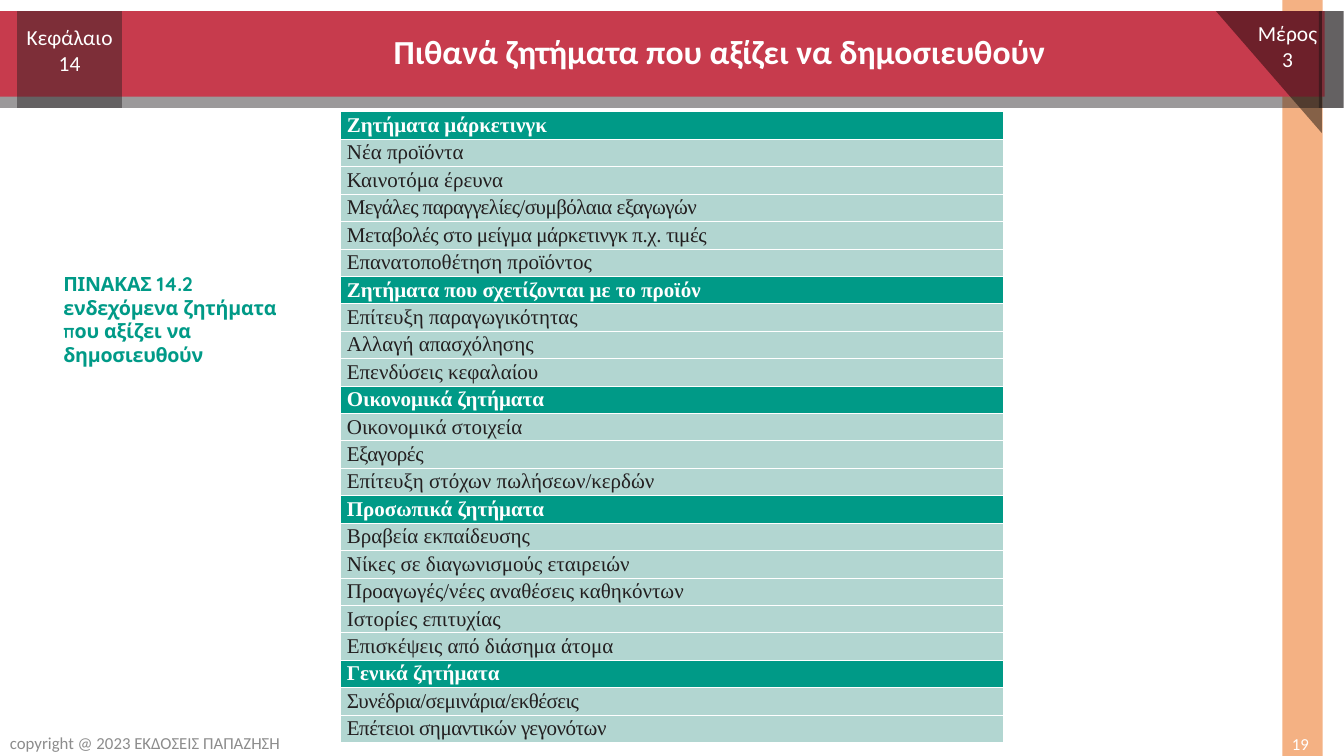
from lxml import etree
from pptx import Presentation, util as u
from pptx.dml import color as dc
from pptx.enum import shapes, text
from pptx.oxml import ns

INK = {"peach": "F4B183", "dark": "231F20", "red": "C73B4D", "black": "000000",
       "white": "FFFFFF", "gray": "8C8C8C", "teal": "009A87", "mint": "B2D6D1"}

HEAD = "Πιθανά ζητήματα που αξίζει να δημοσιευθούν"
TOPICS = [
    ("Ζητήματα μάρκετινγκ", [
        ("Νέα προϊόντα", 0), ("Καινοτόμα έρευνα", 0),
        ("Μεγάλες παραγγελίες/συμβόλαια εξαγωγών", -0.4),
        ("Μεταβολές στο μείγμα μάρκετινγκ π.χ. τιμές", -0.3),
        ("Επανατοποθέτηση προϊόντος", 0)]),
    ("Ζητήματα που σχετίζονται με το προϊόν", [
        ("Επίτευξη παραγωγικότητας", 0), ("Αλλαγή απασχόλησης", 0),
        ("Επενδύσεις κεφαλαίου", 0)]),
    ("Οικονομικά ζητήματα", [
        ("Οικονομικά στοιχεία", 0), ("Εξαγορές", -0.3),
        ("Επίτευξη στόχων πωλήσεων/κερδών", 0)]),
    ("Προσωπικά ζητήματα", [
        ("Βραβεία εκπαίδευσης", 0), ("Νίκες σε διαγωνισμούς εταιρειών", 0),
        ("Προαγωγές/νέες αναθέσεις καθηκόντων", 0),
        ("Ιστορίες επιτυχίας", 0), ("Επισκέψεις από διάσημα άτομα"[:-1], 0)]),
    ("Γενικά ζητήματα", [
        ("Συνέδρια/σεμινάρια/εκθέσεις", -0.4),
        ("Επέτειοι σημαντικών γεγονότων", -0.35)]),
]
TOPICS[3][1][-1] = ("Επισκέψεις από διάσημα άτομα", 0)

BOX, TRI = shapes.MSO_SHAPE.RECTANGLE, shapes.MSO_SHAPE.RIGHT_TRIANGLE
MID, TOP = text.MSO_ANCHOR.MIDDLE, text.MSO_ANCHOR.TOP
LEFT, CENTER, RIGHT = text.PP_ALIGN.LEFT, text.PP_ALIGN.CENTER, text.PP_ALIGN.RIGHT
LABEL = {"name": "Calibri", "size": 15.3, "ink": "white"}
SMALL = {"name": "Calibri", "size": 12, "ink": "gray"}
NOTE = {"name": "Quicksand", "size": 14, "ink": "teal", "bold": True, "gap": -0.2}
CELL = {"name": "Times New Roman", "size": 15}

PARTS = [
    ("shape", BOX, (95.42, 0, 3, 100), "peach", 100),
    ("shape", BOX, (0, 1.47, 99.92, 12.8), "dark", 45),
    ("shape", BOX, (0, 1.47, 98.57, 11.33), "red", 100),
    ("shape", BOX, (98.12, 1.47, 1.88, 12.8), "dark", 45),
    ("title", HEAD, (10.43, 1.47, 86.2, 11.33)),
    ("text", ["copyright @ 2023 ΕΚΔΟΣΕΙΣ ΠΑΠΑΖΗΣΗ"], (0, 96.27, 38.71, 4), SMALL, LEFT, MID),
    ("text", ["19"], (87.32, 96.8, 10.8, 3.07), {**SMALL, "ink": "white"}, RIGHT, MID),
    ("shape", BOX, (1.28, 1.47, 7.8, 12.8), "dark", 45),
    ("text", ["Κεφάλαιο", "14"], (0.08, 2.53, 10.2, 8.27), LABEL, CENTER, TOP),
    ("shape", TRI, (90.47, 1.47, 7.88, 16.13), "black", 45),
    ("text", ["Μέρος", "3"], (90.7, 2, 10.2, 8.27), LABEL, CENTER, TOP),
    ("table", TOPICS, (25.36, 14.8, 49.29, 83.47)),
    ("text", ["ΠΙΝΑΚΑΣ 14.2", "ενδεχόμενα ζητήματα που αξίζει να δημοσιευθούν"],
     (3.98, 35.33, 19.35, 10.8), NOTE, LEFT, TOP),
]

deck = Presentation()
deck.slide_width, deck.slide_height = u.Inches(13.33), u.Inches(7.5)
slide = deck.slides.add_slide(deck.slide_layouts[0])
tree = slide.shapes
sub = slide.placeholders[1].element
sub.getparent().remove(sub)


def tint(name):
    return dc.RGBColor.from_string(INK[name])


def place(area):
    sides = (deck.slide_width, deck.slide_height) * 2
    return [int(side * part / 100) for side, part in zip(sides, area)]


def write(para, words, style):
    run = para.add_run()
    run.text = words
    for key, val in style.items():
        if key == "ink":
            run.font.color.rgb = tint(val)
        elif key == "gap":
            run.font._element.set("spc", str(round(val * 100)))
        else:
            setattr(run.font, key, u.Pt(val) if key == "size" else val)


def draw_shape(kind, area, ink, alpha):
    item = tree.add_shape(kind, *place(area))
    item.shadow.inherit = False
    item.fill.solid()
    item.fill.fore_color.rgb = tint(ink)
    item.line.fill.background()
    if kind == TRI:
        item.rotation = 180
    if alpha < 100:
        tone = item.element.spPr.find(".//" + ns.qn("a:srgbClr"))
        etree.SubElement(tone, ns.qn("a:alpha"), val=str(alpha * 1000))


def draw_title(words, area):
    item = tree.title
    item.left, item.top, item.width, item.height = place(area)
    item.element.getparent().append(item.element)
    item.text_frame.vertical_anchor = MID
    para = item.text_frame.paragraphs[0]
    para.alignment, para.line_spacing = CENTER, 0.9
    write(para, words, {"name": "Calibri", "size": 24, "ink": "white", "bold": True})


def draw_text(lines, area, style, align, anchor):
    frame = tree.add_textbox(*place(area)).text_frame
    frame.word_wrap = True
    frame.vertical_anchor = anchor
    if anchor == TOP:
        frame.auto_size = text.MSO_AUTO_SIZE.SHAPE_TO_FIT_TEXT
    for num, words in enumerate(lines):
        para = frame.add_paragraph() if num else frame.paragraphs[0]
        para.alignment = align
        write(para, words, style)


def edge(cell):
    for side in "LRTB":
        line = etree.SubElement(cell._tc.get_or_add_tcPr(), ns.qn("a:ln" + side), w="9525")
        fill = etree.SubElement(line, ns.qn("a:solidFill"))
        etree.SubElement(fill, ns.qn("a:srgbClr"), val=INK["white"])


def draw_table(topics, area):
    rows = []
    for head, items in topics:
        rows.append((head, "teal", {**CELL, "ink": "white", "bold": True}))
        rows += [(words, "mint", {**CELL, "ink": "dark", "bold": False, "gap": gap})
                 for words, gap in items]
    grid = tree.add_table(len(rows), 1, *place(area)).table
    pads = {"margin_left": 0.06, "margin_top": 0.02, "margin_right": 0, "margin_bottom": 0}
    for num, (words, ink, style) in enumerate(rows):
        cell = grid.cell(num, 0)
        for key, val in pads.items():
            setattr(cell, key, u.Inches(val))
        edge(cell)
        cell.fill.solid()
        cell.fill.fore_color.rgb = tint(ink)
        write(cell.text_frame.paragraphs[0], words, style)


DRAW = {"shape": draw_shape, "title": draw_title, "text": draw_text, "table": draw_table}
for kind, *args in PARTS:
    DRAW[kind](*args)
deck.save("out.pptx")
